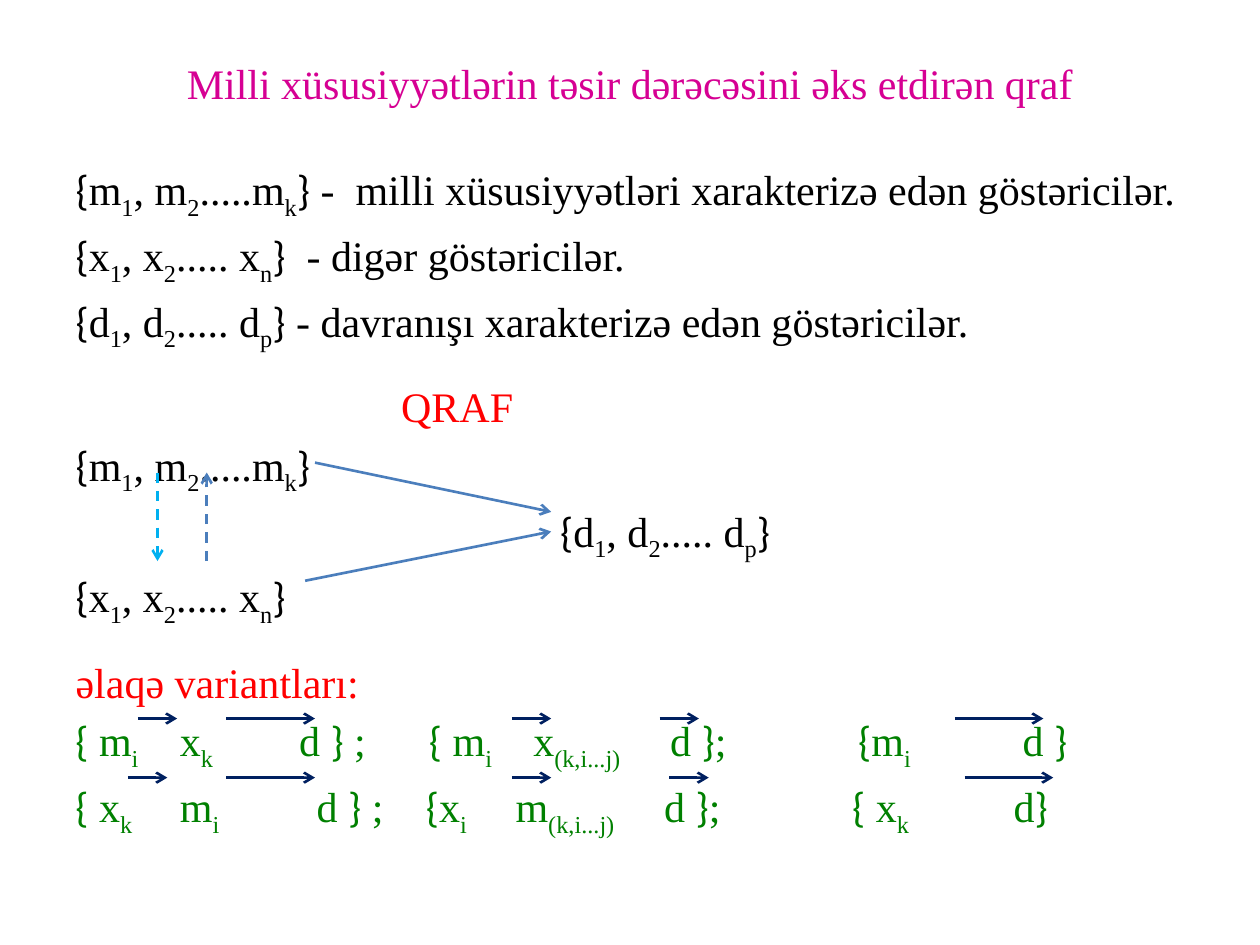
from itertools import groupby

from lxml import etree
from pptx import Presentation
from pptx.dml.color import RGBColor
from pptx.enum.dml import MSO_LINE
from pptx.enum.shapes import MSO_CONNECTOR
from pptx.enum.text import MSO_ANCHOR, MSO_AUTO_SIZE, PP_ALIGN
from pptx.oxml.ns import qn
from pptx.util import Inches, Pt

STRAIGHT, DASH = MSO_CONNECTOR.STRAIGHT, MSO_LINE.DASH
MIDDLE, TOP = MSO_ANCHOR.MIDDLE, MSO_ANCHOR.TOP
CENTER, NO_FIT = PP_ALIGN.CENTER, MSO_AUTO_SIZE.NONE

THEME = {
    "text": "Times New Roman", "brace": "Calibri",
    "size": Pt(24), "line": Pt(1.5), "near": Pt(4.8), "far": Pt(16),
    "title": "D60093", "body": "000000", "head": "FF0000", "variant": "008000",
    "down": "00B0F0", "link": "4B7EBC", "step": "002060",
}

prs = Presentation()
prs.slide_width, prs.slide_height = Inches(10), Inches(7.5)
W, H = prs.slide_width, prs.slide_height
COL, ROW = W / 128, H / 96
TEXT_LEFT = 7.68
s = prs.slides.add_slide(prs.slide_layouts[1])


def write(p, text, color="body", start=TEXT_LEFT, tabs=(), gap="near"):
    for i, part in enumerate(text.split("_")):
        for is_brace, chars in groupby(part, key=lambda c: c in "{}"):
            r = p.add_run()
            r.text = "".join(chars)
            r.font.name = THEME["brace" if is_brace else "text"]
            r.font.size = THEME["size"]
            r.font.color.rgb = RGBColor.from_string(THEME[color])
            if i % 2:
                r._r.get_or_add_rPr().set("baseline", "-25000")
    p.space_before = THEME[gap]
    pPr = p._p.get_or_add_pPr()
    if tabs:
        stops = etree.SubElement(pPr, qn("a:tabLst"))
        for col in tabs:
            etree.SubElement(stops, qn("a:tab"), pos=str(int((col - TEXT_LEFT) * COL)), algn="l")
    else:
        pPr.set("marL", str(int((start - TEXT_LEFT) * COL)))
        pPr.set("indent", "0")
        etree.SubElement(pPr, qn("a:buNone"))


def arrow(x1, y1, x2, y2, color, dash=None):
    c = s.shapes.add_connector(STRAIGHT, int(x1 * COL), int(y1 * ROW), int(x2 * COL), int(y2 * ROW))
    c.line.color.rgb = RGBColor.from_string(THEME[color])
    c.line.width = THEME["line"]
    if dash:
        c.line.dash_style = dash
    etree.SubElement(c.line._get_or_add_ln(), qn("a:tailEnd"), type="arrow")
    etree.SubElement(c._element.spPr, qn("a:effectLst"))


M = "{m_1_, m_2_.....m_k_}"
X = "{x_1_, x_2_..... x_n_}"
D = "{d_1_, d_2_..... d_p_}"
title_lines = [
    ("Milli xüsusiyyətlərin təsir dərəcəsini əks etdirən qraf", {"color": "title"}),
]
body_lines = [
    (M + " -  milli xüsusiyyətləri xarakterizə edən göstəricilər.", {}),
    (X + "  - digər göstəricilər.", {}),
    (D + " - davranışı xarakterizə edən göstəricilər.", {}),
    ("QRAF", {"color": "head", "start": 40.75, "gap": "far"}),
    (M, {}),
    (D, {"start": 56.9}),
    (X, {}),
    ("əlaqə variantları:", {"color": "head", "gap": "far"}),
]
variant_lines = [
    ("{ m_i_\tx_k_\td } ;\t{ m_i_\tx_(k,i...j)_\td };\t{m_i_\td }",
     {"color": "variant", "tabs": [18.3, 30.4, 43.6, 54.2, 68.1, 87.2, 103.9]}),
    ("{ x_k_\tm_i_\td } ;\t{x_i_\tm_(k,i...j)_\td };\t{ x_k_\td}",
     {"color": "variant", "tabs": [18.3, 32.2, 43.3, 52.4, 67.5, 86.6, 103]}),
]

title, body = s.shapes.title, s.placeholders[1]
variants = s.shapes.add_textbox(0, 0, W, H)
for sp, top, height, anchor, lines in (
    (title, 0.04, 0.096, MIDDLE, title_lines),
    (body, 1 / 6, 0.58, TOP, body_lines),
    (variants, 0.75, 0.143, TOP, variant_lines),
):
    sp.left, sp.top, sp.width, sp.height = int(W * 0.05), int(H * top), int(W * 0.9), int(H * height)
    tf = sp.text_frame
    tf.word_wrap = True
    tf.auto_size = NO_FIT
    tf.vertical_anchor = anchor
    for i, (text, fmt) in enumerate(lines):
        p = tf.add_paragraph() if i else tf.paragraphs[0]
        write(p, text, **fmt)
p = title.text_frame.paragraphs[0]
p.alignment = CENTER
p.space_before = Pt(0)

arrow(16, 48, 16, 57, "down", DASH)
arrow(21, 57, 21, 48, "link", DASH)
arrow(32, 47, 56, 52, "link")
arrow(31, 59, 56, 54, "link")

SHORT, LONG = 4, 9
steps = {
    73: ((14, SHORT), (23, LONG), (52, SHORT), (67, SHORT), (97, LONG)),
    79: ((13, SHORT), (23, LONG), (52, SHORT), (68, SHORT), (98, LONG)),
}
for row, starts in steps.items():
    for col, length in starts:
        arrow(col, row, col + length, row, "step")

prs.save("out.pptx")
